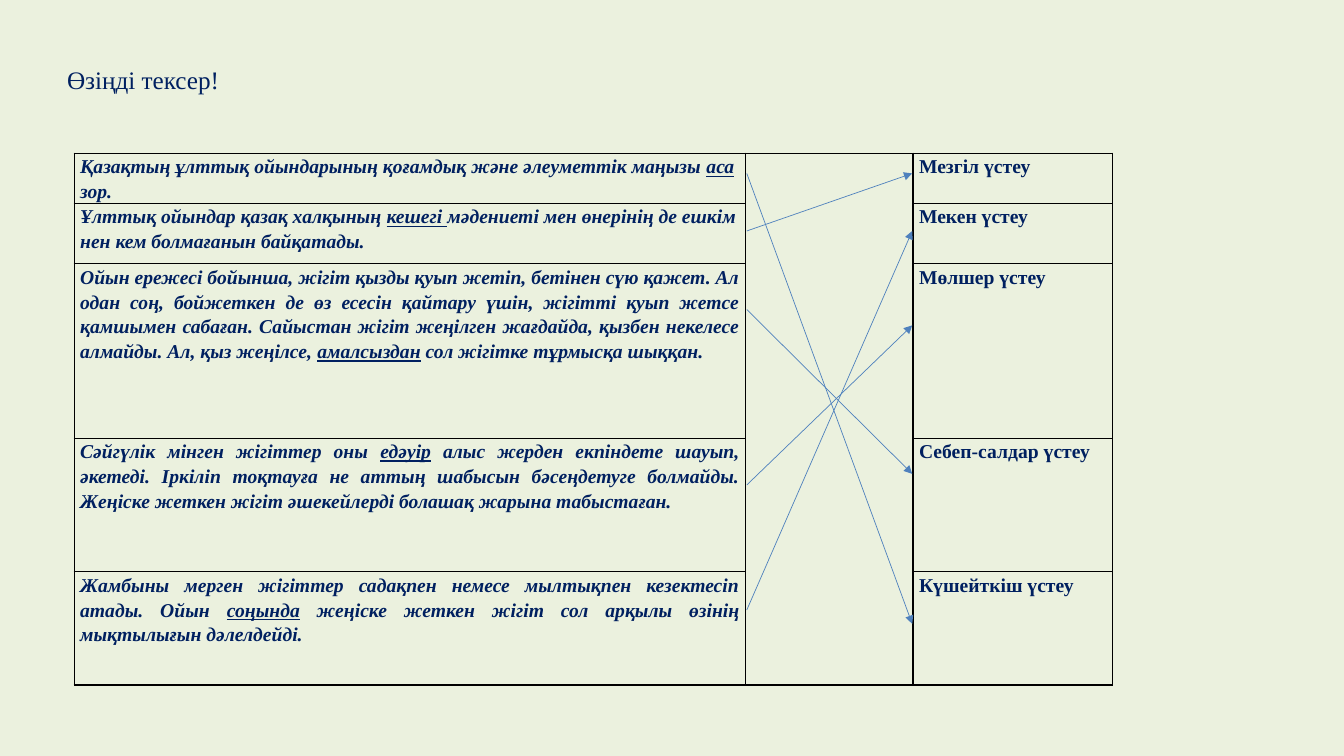
from pptx import Presentation
from pptx import util as u
from pptx.dml.color import RGBColor
from pptx.enum import shapes, text
from pptx.oxml import parse_xml
from pptx.oxml.ns import nsdecls, qn

Cm, Pt = u.Cm, u.Pt
COLORS = {"back": "EBF1DE", "text": "002060", "grid": "000000", "arrow": "4F81BD"}
FONT = "Times New Roman"
NO_STYLE = "{2D5ABB26-0587-4C30-8999-92F81FD0307C}"

# Bars enclose the underlined adverb; each row: sentence, adverb type, height
ROWS = [
    ("Қазақтың ұлттық ойындарының қоғамдық және әлеуметтік маңызы |аса| зор.",
     "Мезгіл үстеу", 1.26),
    ("Ұлттық ойындар қазақ халқының |кешегі |мәдениеті мен өнерінің де "
     "ешкімнен кем болмағанын байқатады.", "Мекен үстеу", 1.52),
    ("Ойын ережесі бойынша, жігіт қызды қуып жетіп, бетінен сүю қажет. "
     "Ал одан соң, бойжеткен де өз есесін қайтару үшін, жігітті қуып жетсе "
     "қамшымен сабаған. Сайыстан жігіт жеңілген жағдайда, қызбен некелесе "
     "алмайды. Ал, қыз жеңілсе, |амалсыздан| сол жігітке тұрмысқа шыққан.",
     "Мөлшер үстеу", 4.4),
    ("Сәйгүлік мінген жігіттер оны |едәуір| алыс жерден екпіндете шауып, "
     "әкетеді. Іркіліп тоқтауға не аттың шабысын бәсеңдетуге болмайды. "
     "Жеңіске жеткен жігіт әшекейлерді болашақ жарына табыстаған.",
     "Себеп-салдар үстеу", 3.36),
    ("Жамбыны мерген жігіттер садақпен немесе мылтықпен кезектесіп атады. "
     "Ойын |соңында| жеңіске жеткен жігіт сол арқылы өзінің мықтылығын "
     "дәлелдейді.", "Күшейткіш үстеу", 2.86),
]
WIDTHS = [16.92, 4.22, 5.03]
ARROWS = [(4.37, 15.72), (5.82, 4.37), (7.8, 11.94), (12.22, 8.2), (15.37, 5.82)]


def add_run(para, words, size):
    run = para.add_run()
    run.text = words
    run.font.name = FONT
    run.font.size = Pt(size)
    run.font.color.rgb = RGBColor.from_string(COLORS["text"])
    return run


def add_edges(cell, sides):
    """Draw black lines on the given sides (L, R, T, B) of a cell."""
    props = cell._tc.get_or_add_tcPr()
    for side in sides:
        props.append(parse_xml(
            f'<a:ln{side} {nsdecls("a")} w="12700"><a:solidFill>'
            f'<a:srgbClr val="{COLORS["grid"]}"/></a:solidFill></a:ln{side}>'))


deck = Presentation()
deck.slide_width, deck.slide_height = Cm(33.87), Cm(19.05)
slide = deck.slides.add_slide(deck.slide_layouts[5])
slide.background.fill.solid()
slide.background.fill.fore_color.rgb = RGBColor.from_string(COLORS["back"])

# Title
title = slide.shapes.title
title.left, title.top, title.width, title.height = Cm(1.69), Cm(1.5), Cm(20), Cm(1)
frame = title.text_frame
frame.margin_left = frame.margin_right = frame.margin_top = frame.margin_bottom = 0
frame.vertical_anchor = text.MSO_ANCHOR.MIDDLE
frame.paragraphs[0].alignment = text.PP_ALIGN.LEFT
add_run(frame.paragraphs[0], "Өзіңді тексер!", 18)

# Table
height = sum(row[2] for row in ROWS)
table = slide.shapes.add_table(len(ROWS), len(WIDTHS), Cm(1.87), Cm(3.86),
                               Cm(sum(WIDTHS)), Cm(height)).table
table.first_row = table.horz_banding = False
table._tbl.tblPr.find(qn("a:tableStyleId")).text = NO_STYLE
for col, width in zip(table.columns, WIDTHS):
    col.width = Cm(width)

last = len(ROWS) - 1
for i, (sentence, kind, tall) in enumerate(ROWS):
    table.rows[i].height = Cm(tall)
    short = i < 2
    if short:
        sentence = sentence.replace(" ", chr(160))  # no-break spaces
    for j, words in enumerate((sentence, "", kind)):
        cell = table.cell(i, j)
        cell.margin_left = cell.margin_right = Cm(0.15)
        cell.margin_top = cell.margin_bottom = 0
        sides = "LRTB"
        if j == 1:
            sides = {0: "LRTB", last: "LRB"}.get(i, "LR")
        add_edges(cell, sides)
        cell.fill.background()
        if not words:
            continue
        para = cell.text_frame.paragraphs[0]
        para.line_spacing = 1.15
        para.space_after = Pt(10)
        if j == 0 and not short:
            para.alignment = text.PP_ALIGN.JUSTIFY
        for k, part in enumerate(words.split("|")):
            font = add_run(para, part, 14).font
            font.bold = True
            font.italic = j == 0
            font.underline = k == 1
table.cell(0, 1).merge(table.cell(last, 1))

# Answer arrows
for start, end in ARROWS:
    arrow = slide.shapes.add_connector(shapes.MSO_CONNECTOR.STRAIGHT,
                                       Cm(18.82), Cm(start), Cm(22.99), Cm(end))
    arrow.line.color.rgb = RGBColor.from_string(COLORS["arrow"])
    arrow.line.width = Pt(0.5)
    arrow.line._get_or_add_ln().append(
        parse_xml(f'<a:tailEnd {nsdecls("a")} type="triangle"/>'))
    arrow._element.spPr.append(parse_xml(f'<a:effectLst {nsdecls("a")}/>'))

deck.save("out.pptx")
